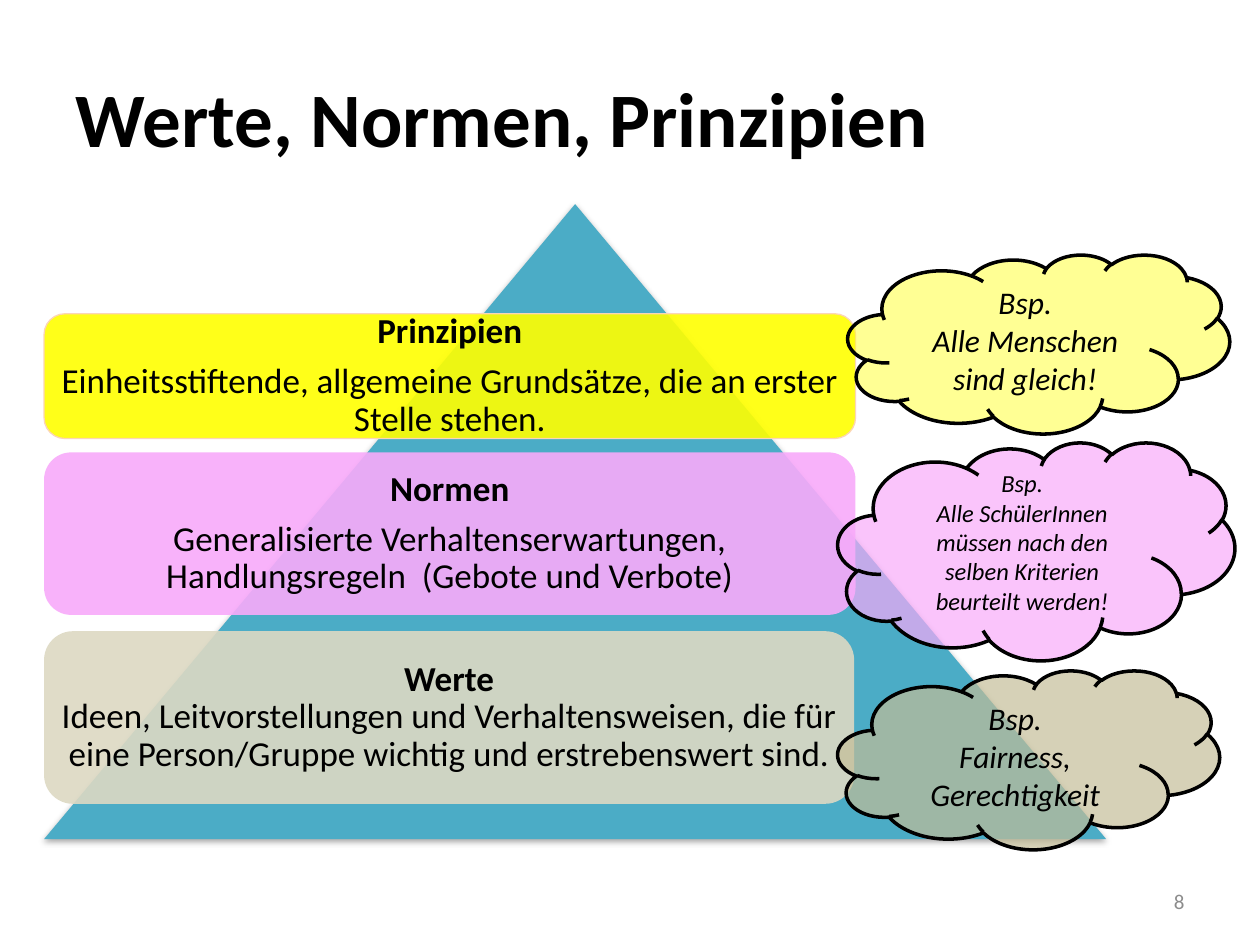
from lxml.etree import SubElement
from pptx import Presentation
from pptx.dml.color import RGBColor
from pptx.enum.shapes import MSO_SHAPE as Shape
from pptx.enum.text import MSO_ANCHOR as Anchor, PP_ALIGN as Align
from pptx.oxml import parse_xml
from pptx.oxml.ns import nsdecls, qn
from pptx.util import Pt

PX = 9144  # 100 px to the inch
FONT = "Calibri"
BLACK = RGBColor(0x00, 0x00, 0x00)
GREY = RGBColor(0x8C, 0x8C, 0x8C)
TEAL = RGBColor(0x4B, 0xAC, 0xC6)
YELLOW = RGBColor(0xFF, 0xFF, 0x00)
PINK = RGBColor(0xF8, 0xAA, 0xFA)
SAND = RGBColor(0xDD, 0xD9, 0xC3)
KHAKI = RGBColor(0xC4, 0xBD, 0x97)
PEACH = RGBColor(0xFC, 0xD5, 0xB5)

# Content
TITLE = "Werte, Normen, Prinzipien"
PAGE_NUMBER = "8"
# heading, explanation, same paragraph, (left, top, width, height), fill, outline
LEVELS = [
    ("Prinzipien",
     "Einheitsstiftende, allgemeine Grundsätze, die an erster Stelle stehen.",
     False, (35, 249, 644, 99), YELLOW, PEACH),
    ("Normen",
     "Generalisierte Verhaltenserwartungen, Handlungsregeln  (Gebote und Verbote)",
     False, (35, 359, 644, 129), PINK, None),
    ("Werte",
     "Ideen, Leitvorstellungen und Verhaltensweisen, die für eine Person/Gruppe "
     "wichtig und erstrebenswert sind.",
     True, (35, 501, 643, 137), SAND, None),
]
# example, (left, top, width, height), fill, opacity in %, text size, bottom inset
EXAMPLES = [
    ("Alle Menschen sind gleich!", (673, 202, 303, 142), YELLOW, 42, 18, 5),
    ("Alle SchülerInnen müssen nach den selben Kriterien beurteilt werden!",
     (665, 351, 315, 173), PINK, 69, 14, 12),
    ("Fairness, Gerechtigkeit", (665, 532, 303, 142), KHAKI, 69, 18, 5),
]


def emu(lengths):
    return [length * PX for length in lengths]


def add_span(para, text, size, color=BLACK, bold=False, italic=False):
    span = para.add_run()
    span.text = text
    font = span.font
    font.name, font.size, font.bold, font.italic = FONT, Pt(size), bold, italic
    font.color.rgb = color


def add_box(page, kind, place, fill, opacity=100, outline=None, weight=1):
    box = page.shapes.add_shape(kind, *emu(place))
    box.shadow.inherit = False
    box.fill.solid()
    box.fill.fore_color.rgb = fill
    if opacity < 100:
        color = box.fill._xPr.find(qn("a:solidFill"))[0]
        SubElement(color, qn("a:alpha"), val=str(opacity * 1000))
    if outline is None:
        box.line.fill.background()
    else:
        box.line.color.rgb = outline
        box.line.width = Pt(weight)
    box.text_frame.word_wrap = True
    box.text_frame.vertical_anchor = Anchor.MIDDLE
    return box


def add_shadow(box):
    effects = box._element.spPr.find(qn("a:effectLst"))
    effects.append(parse_xml(
        f'<a:outerShdw {nsdecls("a")} blurRad="{Pt(3.1)}" dist="{Pt(1.8)}" '
        'dir="5400000" rotWithShape="0"><a:srgbClr val="000000">'
        '<a:alpha val="35000"/></a:srgbClr></a:outerShdw>'))


def add_level(page, heading, explanation, same_para, place, fill, outline):
    box = add_box(page, Shape.ROUNDED_RECTANGLE, place, fill, 90, outline, 0.75)
    frame = box.text_frame
    frame.margin_left = frame.margin_right = 3 * PX
    frame.margin_top = frame.margin_bottom = 3 * PX
    para = frame.paragraphs[0]
    add_span(para, heading, 20, bold=True)
    if same_para:
        para.add_line_break()
    else:
        para.space_after = Pt(7)
        para = frame.add_paragraph()
    add_span(para, explanation, 20)
    for para in frame.paragraphs:
        para.alignment = Align.CENTER
        para.line_spacing = 0.9


def add_example(page, example, place, fill, opacity, size, bottom):
    cloud = add_box(page, Shape.CLOUD, place, fill, opacity, BLACK, 2)
    frame = cloud.text_frame
    frame.margin_bottom = bottom * PX
    for para, text in ((frame.paragraphs[0], "Bsp."),
                       (frame.add_paragraph(), example)):
        para.alignment = Align.CENTER
        add_span(para, text, size, italic=True)


def main():
    deck = Presentation()
    deck.slide_width, deck.slide_height = emu((1000, 750))
    page = deck.slides.add_slide(deck.slide_layouts[5])

    # Title
    title = page.shapes.title
    title.left, title.top, title.width, title.height = emu((50, 30, 900, 125))
    title.text_frame.vertical_anchor = Anchor.MIDDLE
    para = title.text_frame.paragraphs[0]
    para.alignment = Align.LEFT
    add_span(para, TITLE, 44, bold=True)

    # Page number
    number = page.shapes.add_textbox(*emu((717, 695, 233, 40)))
    number.text_frame.word_wrap = True
    number.text_frame.vertical_anchor = Anchor.MIDDLE
    para = number.text_frame.paragraphs[0]
    para.alignment = Align.RIGHT
    add_span(para, PAGE_NUMBER, 12, GREY)

    # Pyramid with its levels, then the example clouds
    add_shadow(add_box(page, Shape.ISOSCELES_TRIANGLE, (35, 162, 843, 504), TEAL))
    for level in LEVELS:
        add_level(page, *level)
    for example in EXAMPLES:
        add_example(page, *example)

    deck.save("out.pptx")


if __name__ == "__main__":
    main()
